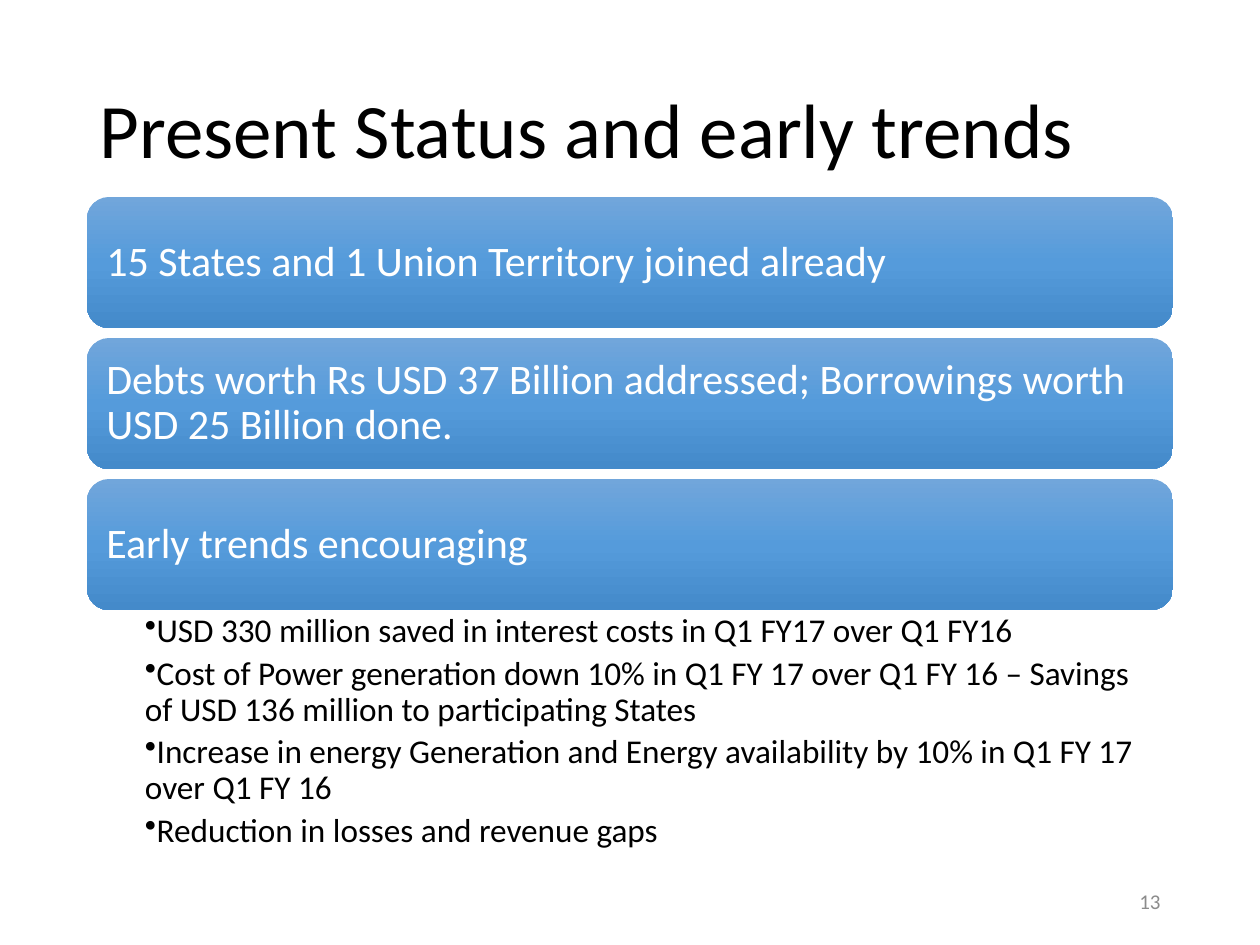
from copy import deepcopy

from pptx import Presentation
from pptx import util as u
from pptx.dml.color import RGBColor
from pptx.enum import shapes, text
from pptx.oxml.ns import qn
from lxml import etree

BLACK = RGBColor(0x00, 0x00, 0x00)
WHITE = RGBColor(0xFF, 0xFF, 0xFF)
GREY = RGBColor(0x8C, 0x8C, 0x8C)
BLUES = [RGBColor(0x71, 0xA6, 0xDB), RGBColor(0x55, 0x9B, 0xDB),
         RGBColor(0x44, 0x8A, 0xCA)]

LEFT, WIDE = 87, 1086
TOP, HIGH, STEP = 197, 131, 141


def px(n):
    return u.Emu(round(n * 914400 / 126))


def style(para, size, color, align=text.PP_ALIGN.LEFT):
    para.alignment = align
    para.font.name = "Calibri"
    para.font.size = u.Pt(size)
    para.font.color.rgb = color


deck = Presentation()
deck.slide_width, deck.slide_height = px(1260), px(945)
slide = deck.slides.add_slide(deck.slide_layouts[5])

# Title
title = slide.shapes.title
title.left, title.top, title.width, title.height = px(LEFT), px(42), px(WIDE), px(183)
frame = title.text_frame
frame.text = "Present Status and early trends"
frame.vertical_anchor = text.MSO_ANCHOR.MIDDLE
frame.paragraphs[0].line_spacing = 0.9
style(frame.paragraphs[0], 44, BLACK)

# Gradient bars
heads = [
    "15 States and 1 Union Territory joined already",
    "Debts worth Rs USD 37 Billion addressed; Borrowings worth USD 25 Billion done.",
    "Early trends encouraging",
]
for row, head in enumerate(heads):
    bar = slide.shapes.add_shape(shapes.MSO_SHAPE.ROUNDED_RECTANGLE, px(LEFT),
                                 px(TOP + row * STEP), px(WIDE), px(HIGH))
    bar.shadow.inherit = False
    bar.line.fill.background()
    bar.fill.gradient()
    bar.fill.gradient_angle = 270
    stops = bar._element.spPr.find(qn("a:gradFill")).find(qn("a:gsLst"))
    stops.append(deepcopy(stops[-1]))
    for stop, blue, place in zip(bar.fill.gradient_stops, BLUES, (0, 0.5, 1)):
        stop.color.rgb = blue
        stop.position = place
    frame = bar.text_frame
    frame.text = head
    frame.word_wrap = True
    frame.vertical_anchor = text.MSO_ANCHOR.MIDDLE
    frame.margin_left = frame.margin_right = px(13)
    frame.margin_top = frame.margin_bottom = px(13)
    frame.paragraphs[0].line_spacing = 0.9
    style(frame.paragraphs[0], 24, WHITE)

# Bullets under the last bar
trends = [
    "USD 330 million saved in interest costs in Q1 FY17 over Q1 FY16",
    "Cost of Power generation down 10% in Q1 FY 17 over Q1 FY 16 – Savings "
    "of USD 136 million to participating States",
    "Increase in energy Generation and Energy availability by 10% in Q1 FY 17 "
    "over Q1 FY 16",
    "Reduction in losses and revenue gaps",
]
box = slide.shapes.add_textbox(px(LEFT), px(610), px(WIDE), px(253))
frame = box.text_frame
frame.word_wrap = True
frame.margin_left, frame.margin_right = px(34), px(24)
frame.margin_top = frame.margin_bottom = px(4)
frame.text = "\n".join(trends)
for para in frame.paragraphs:
    para.level = 1
    para.line_spacing = 0.9
    para.space_after = u.Pt(3.8)
    props = para._p.get_or_add_pPr()
    props.set("marL", str(px(24)))
    props.set("indent", "0")
    etree.SubElement(props, qn("a:buChar")).set("char", "•")
    style(para, 19, BLACK)

# Slide number
box = slide.shapes.add_textbox(px(890), px(876), px(283), px(50))
frame = box.text_frame
frame.word_wrap = True
frame.vertical_anchor = text.MSO_ANCHOR.MIDDLE
frame.text = "13"
style(frame.paragraphs[0], 12, GREY, text.PP_ALIGN.RIGHT)

deck.save("out.pptx")
